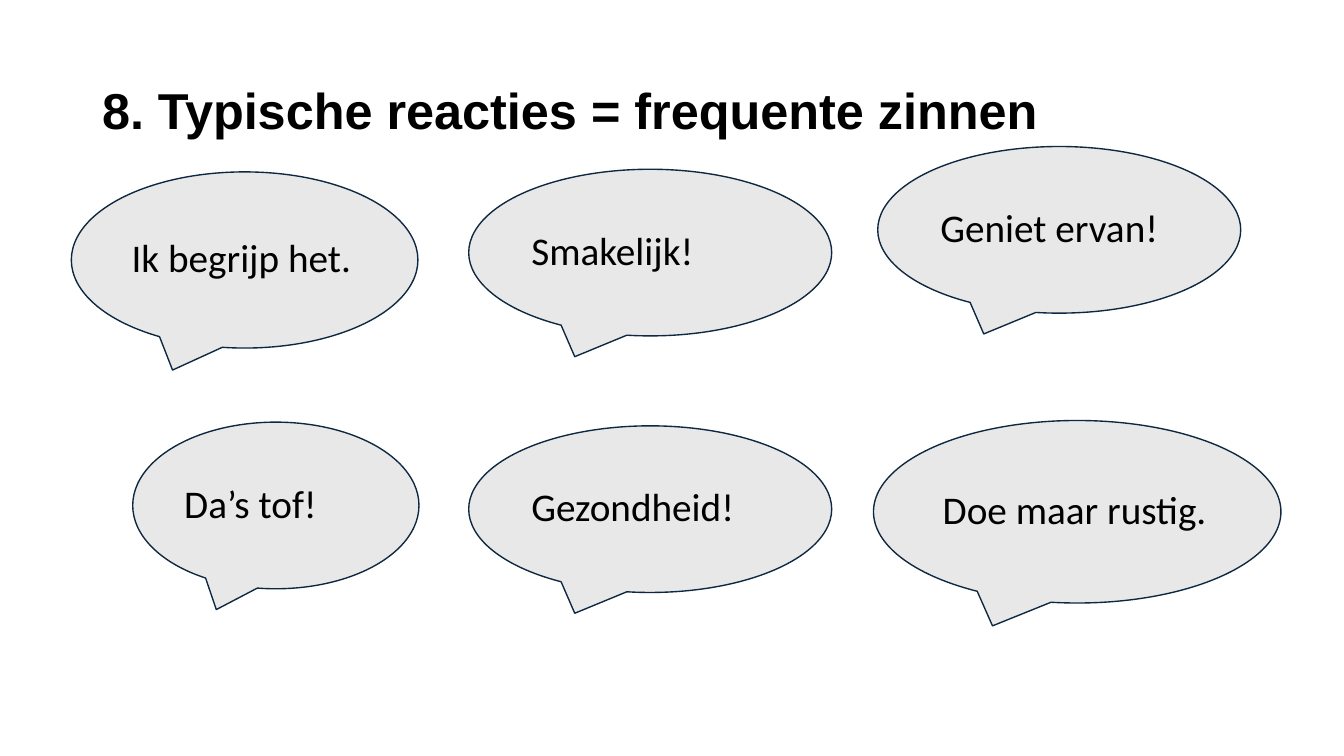
from pptx import Presentation
from pptx.dml.color import RGBColor
from pptx.enum.shapes import MSO_SHAPE
from pptx.enum.text import MSO_ANCHOR, PP_ALIGN
from pptx.util import Cm, Pt

BUBBLES = [
    ("Geniet ervan!", (16.59, 2.77, 6.86, 3.15)),
    ("Ik begrijp het.", (1.35, 3.25, 6.55, 3.33)),
    ("Doe maar rustig.", (16.51, 7.95, 7.7, 3.45)),
    ("Da’s tof!", (2.51, 7.98, 5.41, 3.15)),
    ("Smakelijk!", (8.86, 3.2, 6.86, 3.15)),
    ("Gezondheid!", (8.86, 8.05, 6.86, 3.15)),
]


def color(value):
    """Return the colour for a hex string."""
    return RGBColor.from_string(value)


def write_text(shape, text, font_name, size, bold=False, inset=0.18):
    """Put one left-aligned, vertically centred line of text in a shape."""
    frame = shape.text_frame
    frame.text = text
    frame.word_wrap = True
    frame.vertical_anchor = MSO_ANCHOR.MIDDLE
    frame.margin_left = frame.margin_right = Cm(0.18)
    frame.margin_top = frame.margin_bottom = Cm(inset)
    para = frame.paragraphs[0]
    para.alignment = PP_ALIGN.LEFT
    para.line_spacing = 0.9
    span = para.runs[0]
    span.font.name = font_name
    span.font.size = Pt(size)
    span.font.bold = bold
    span.font.color.rgb = color("000000")


def add_title(page, text, box):
    """Add the slide heading in the given box."""
    title = page.shapes.add_textbox(*map(Cm, box))
    write_text(title, text, "Arial", 27, bold=True, inset=0.1)


def add_bubble(page, text, box):
    """Add a speech bubble filling the given box."""
    bubble = page.shapes.add_shape(MSO_SHAPE.OVAL_CALLOUT, *map(Cm, box))
    bubble.adjustments[0] = -0.208
    bubble.adjustments[1] = 0.625
    bubble.shadow.inherit = False
    bubble.fill.solid()
    bubble.fill.fore_color.rgb = color("E8E8E8")
    bubble.line.color.rgb = color("0E2841")
    bubble.line.width = Pt(0.75)
    write_text(bubble, text, "Calibri", 21)


def main():
    """Build and save the deck."""
    deck = Presentation()
    deck.slide_width, deck.slide_height = Cm(25.4), Cm(14.29)
    page = deck.slides.add_slide(deck.slide_layouts[6])
    add_title(page, "8. Typische reacties = frequente zinnen", (1.75, 0.76, 21.9, 2.77))
    for text, box in BUBBLES:
        add_bubble(page, text, box)
    deck.save("out.pptx")


if __name__ == "__main__":
    main()
